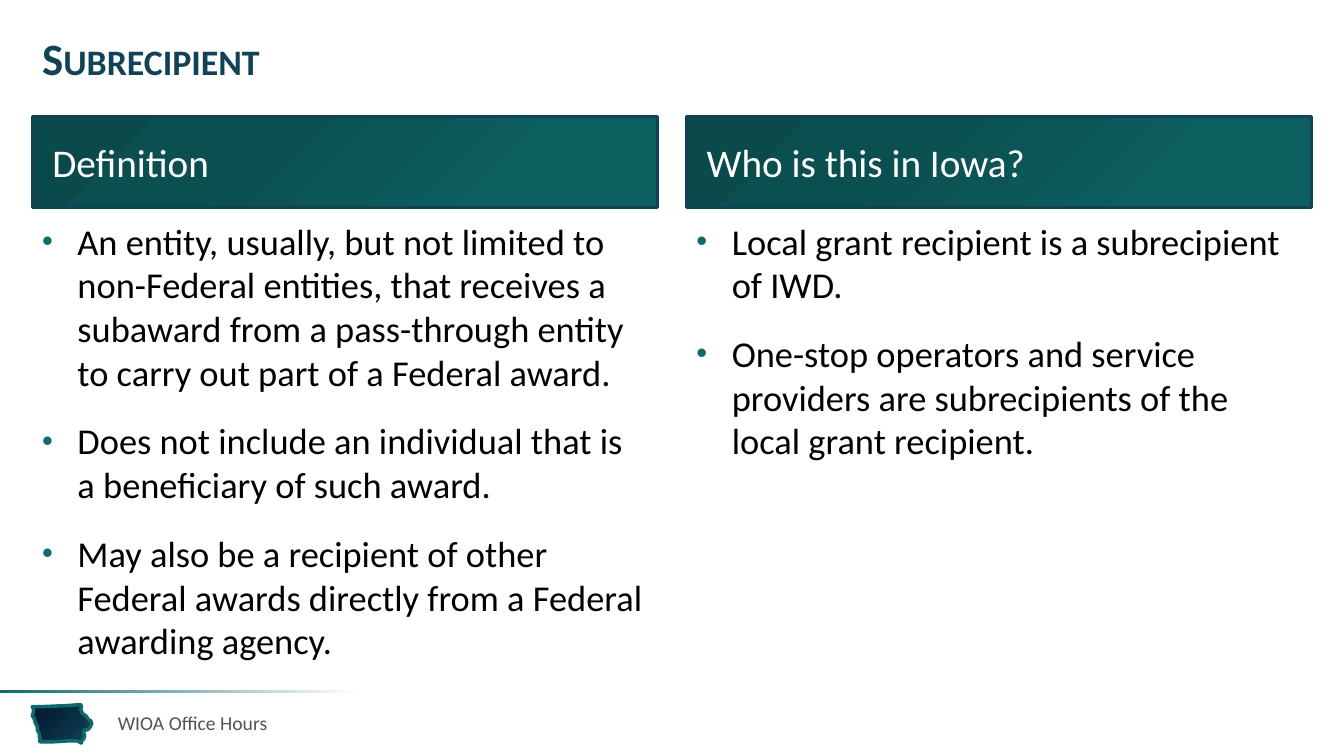
from lxml.etree import SubElement
from pptx import Presentation
from pptx.dml.color import RGBColor
from pptx.enum.shapes import MSO_SHAPE as Preset
from pptx.enum.text import MSO_ANCHOR as Anchor, PP_ALIGN as Align
from pptx.oxml.ns import qn
from pptx.util import Inches, Pt

THEME = {
    "font": "Calibri",
    "navy": "114257",
    "night": "00162E",
    "teal": "0F6A6B",
    "white": "FFFFFF",
    "black": "000000",
    "grey": "535355",
    "header_stops": [(0, "0D5E5F"), (23, "0D5E5F"), (69, "0B4F50"), (97, "0B4A4B")],
    "title_size": 32,
    "header_size": 28,
    "body_size": 26,
    "footer_size": 14,
}


def paint_gradient(shape, stops, angle=None):
    """Fill linearly at a clockwise angle, or radially from the bottom right corner."""
    shape.shadow.inherit = False
    shape.fill.gradient()
    gradient = shape._element.spPr.find(qn("a:gradFill"))
    for child in list(gradient):
        gradient.remove(child)
    stop_list = SubElement(gradient, qn("a:gsLst"))
    for position, color in stops:
        stop = SubElement(stop_list, qn("a:gs"), pos=str(position * 1000))
        SubElement(stop, qn("a:srgbClr"), val=color)
    if angle is None:
        radial = SubElement(gradient, qn("a:path"))
        radial.set("path", "circle")
        SubElement(radial, qn("a:fillToRect"), l="100000", t="100000")
    else:
        SubElement(gradient, qn("a:lin"), ang=str(angle * 60000), scaled="0")


def write_text(shape, lines, size, color, frame_format, paragraph_format):
    """Put one paragraph per line into a shape and return the paragraphs."""
    frame = shape.text_frame
    frame.word_wrap = True
    for name, value in frame_format.items():
        setattr(frame, name, value)
    frame.text = "\n".join(lines)
    for paragraph in frame.paragraphs:
        paragraph.alignment = Align.LEFT
        for name, value in paragraph_format.items():
            setattr(paragraph, name, value)
        font = paragraph.runs[0].font
        font.name = THEME["font"]
        font.size = Pt(size)
        font.color.rgb = RGBColor.from_string(color)
    return frame.paragraphs


presentation = Presentation()
presentation.slide_width = Inches(13.33)
presentation.slide_height = Inches(7.5)
slide = presentation.slides.add_slide(presentation.slide_layouts[6])
shapes = slide.shapes

# Iowa outline, in hundredths of an inch
iowa_points = [
    (80, 699), (66, 700), (42, 701), (32, 701), (33, 703), (33, 707), (32, 710),
    (34, 713), (35, 717), (37, 721), (37, 724), (39, 728), (39, 731), (39.5, 733),
    (39, 735), (40, 736), (52, 736.5), (68, 735), (77, 735), (80, 737), (81, 737),
    (80, 736), (83, 733), (84, 730), (83, 727), (84, 724), (87, 724), (89, 722),
    (91, 718), (90, 715), (88, 714), (85, 710), (82, 708), (81, 706), (80, 703),
    (81, 701),
]
outline = shapes.build_freeform(*iowa_points[0], scale=Inches(0.01))
outline.add_line_segments(iowa_points[1:], close=True)
iowa = outline.convert_to_shape()
paint_gradient(iowa, [(0, THEME["night"]), (100, THEME["navy"])], 45)
iowa.line.color.rgb = RGBColor.from_string(THEME["teal"])
iowa.line.width = Pt(2.5)

# Fading footer rule
rule = shapes.add_shape(Preset.RECTANGLE, 0, Inches(6.85), Inches(3.8), Inches(0.03))
paint_gradient(rule, [(6, THEME["white"]), (100, THEME["teal"])], 180)
rule.line.fill.background()

# Title
title = shapes.add_textbox(Inches(0.32), Inches(0.24), Inches(12.69), Inches(0.75))
title_paragraph = write_text(
    title, ["Subrecipient"], THEME["title_size"], THEME["navy"],
    {"vertical_anchor": Anchor.MIDDLE}, {"line_spacing": 0.85},
)[0]
title_font = title_paragraph.runs[0].font
title_font.bold = True
title_paragraph.runs[0]._r.get_or_add_rPr().set("cap", "small")

# Two columns: header band above a bulleted list
columns = [
    ("Definition", [
        "An entity, usually, but not limited to non-Federal entities, that receives "
        "a subaward from a pass-through entity to carry out part of a Federal award.",
        "Does not include an individual that is a beneficiary of such award.",
        "May also be a recipient of other Federal awards directly from a Federal "
        "awarding agency.",
    ]),
    ("Who is this in Iowa?", [
        "Local grant recipient is a subrecipient of IWD.",
        "One-stop operators and service providers are subrecipients of the local "
        "grant recipient.",
    ]),
]
column_width = Inches(6.2)
header_frame = {
    "vertical_anchor": Anchor.MIDDLE,
    "margin_left": Inches(0.2), "margin_right": Inches(0.2),
    "margin_top": 0, "margin_bottom": 0,
}
spacing = {"space_before": Pt(18)}

for index, (heading, points) in enumerate(columns):
    left = Inches(0.32 + index * 6.49)
    header = shapes.add_shape(Preset.RECTANGLE, left, Inches(1.16), column_width, Inches(0.9))
    paint_gradient(header, THEME["header_stops"])
    header.line.color.rgb = RGBColor.from_string(THEME["navy"])
    header.line.width = Pt(2)
    write_text(header, [heading], THEME["header_size"], THEME["white"], header_frame, spacing)

    body = shapes.add_textbox(left, Inches(2.12), column_width, Inches(4.65))
    bullets = write_text(
        body, points, THEME["body_size"], THEME["black"],
        {"vertical_anchor": Anchor.TOP}, spacing,
    )
    for paragraph in bullets:
        properties = paragraph._p.get_or_add_pPr()
        properties.set("marL", str(Inches(0.35)))
        properties.set("indent", str(-Inches(0.35)))
        bullet_color = SubElement(properties, qn("a:buClr"))
        SubElement(bullet_color, qn("a:srgbClr"), val=THEME["teal"])
        SubElement(properties, qn("a:buSzPct"), val="85000")
        SubElement(properties, qn("a:buFont"), typeface="Arial")
        SubElement(properties, qn("a:buChar"), char="•")

# Footer
footer = shapes.add_textbox(Inches(1.07), Inches(6.97), Inches(9.06), Inches(0.4))
write_text(
    footer, ["WIOA Office Hours"], THEME["footer_size"], THEME["grey"],
    {"vertical_anchor": Anchor.MIDDLE}, {},
)

presentation.save("out.pptx")
